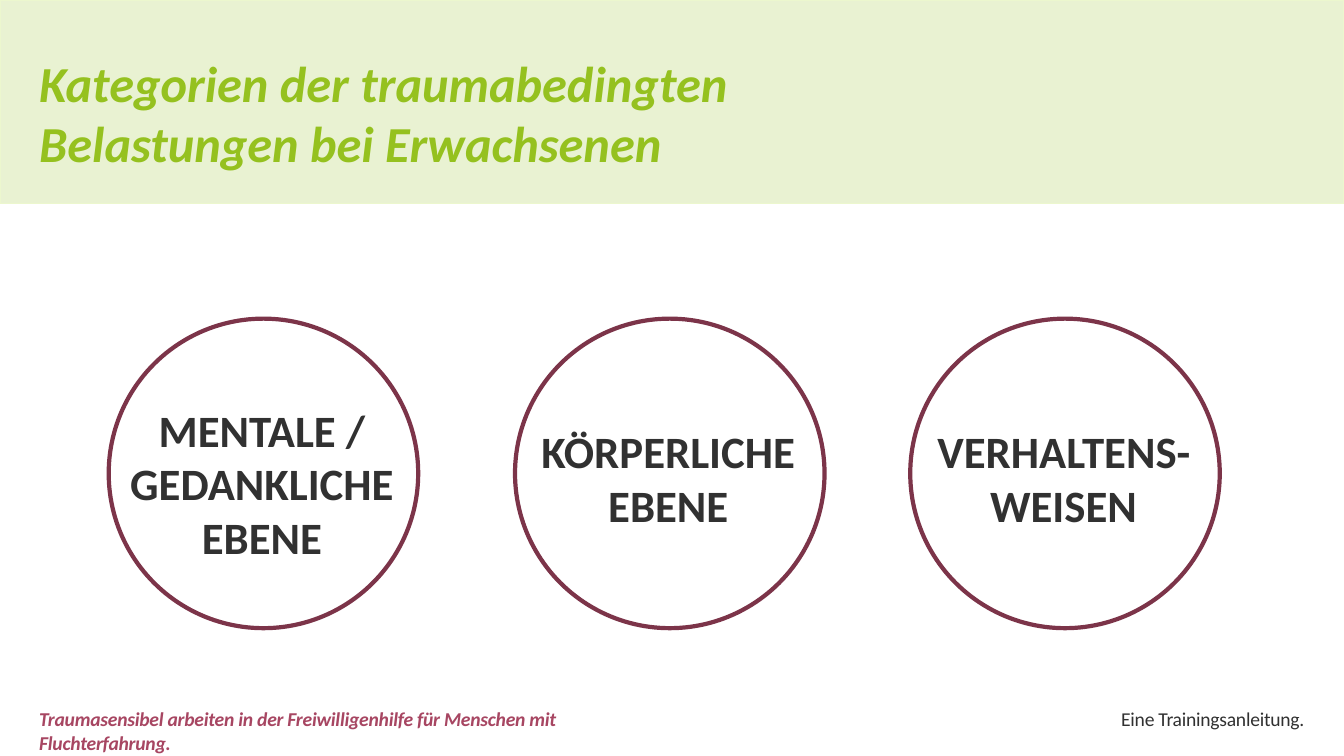
from lxml.etree import SubElement
from pptx import Presentation
from pptx.dml.color import RGBColor
from pptx.enum.shapes import MSO_SHAPE
from pptx.enum.text import MSO_ANCHOR, MSO_AUTO_SIZE, PP_ALIGN
from pptx.oxml.ns import qn
from pptx.util import Cm, Pt

GREEN = RGBColor(0x95, 0xC1, 0x1F)
PALE_GREEN = RGBColor(0xEC, 0xF7, 0xCE)
BERRY = RGBColor(0x7C, 0x34, 0x49)
ROSE = RGBColor(0xA7, 0x46, 0x62)
DARK = RGBColor(0x31, 0x31, 0x31)

WIDTH, HEIGHT = 33.87, 19.05
CIRCLE_TOP, CIRCLE_SIZE = 8.03, 7.8
FOOTER_TOP, FOOTER_HEIGHT = 17.7, 0.86


class SlideBuilder:
    font = "Calibri"

    def __init__(self, deck):
        self.page = deck.slides.add_slide(deck.slide_layouts[6])

    def shape(self, kind, left, top, width, height, line, weight, fill=None, opacity=100):
        shape = self.page.shapes.add_shape(kind, Cm(left), Cm(top), Cm(width), Cm(height))
        shape.shadow.inherit = False
        shape.line.color.rgb = line
        shape.line.width = Pt(weight)
        if fill is None:
            shape.fill.background()
        else:
            shape.fill.solid()
            shape.fill.fore_color.rgb = fill
            color = shape.fill._xPr.find(".//" + qn("a:srgbClr"))
            SubElement(color, qn("a:alpha"), val=str(opacity * 1000))

    def text(self, left, top, width, height, paragraphs, size, color, bold=False,
             italic=False, align=PP_ALIGN.LEFT, anchor=MSO_ANCHOR.TOP, wrap=True,
             grow=True, spacing=None):
        """Each paragraph is a list of lines."""
        box = self.page.shapes.add_textbox(Cm(left), Cm(top), Cm(width), Cm(height))
        frame = box.text_frame
        frame.word_wrap = wrap
        frame.auto_size = MSO_AUTO_SIZE.SHAPE_TO_FIT_TEXT if grow else MSO_AUTO_SIZE.NONE
        frame.vertical_anchor = anchor
        for index, lines in enumerate(paragraphs):
            para = frame.add_paragraph() if index else frame.paragraphs[0]
            para.alignment = align
            for number, line in enumerate(lines):
                if number:
                    para.add_line_break()
                span = para.add_run()
                span.text = line
                span.font.name = self.font
                span.font.size = Pt(size)
                span.font.bold = bold
                span.font.italic = italic
                span.font.color.rgb = color
                if spacing is not None:
                    span._r.get_or_add_rPr().set("spc", str(round(spacing * 100)))

    def footer(self, left, width, words, color, **style):
        self.text(left, FOOTER_TOP, width, FOOTER_HEIGHT, [[words]], 14, color,
                  wrap=False, spacing=-0.2, **style)

    def category(self, left, text_top, text_height, paragraphs):
        self.shape(MSO_SHAPE.OVAL, left, CIRCLE_TOP, CIRCLE_SIZE, CIRCLE_SIZE, BERRY, 3)
        self.text(left - 0.06, text_top, 7.85, text_height, paragraphs, 32, DARK,
                  bold=True, align=PP_ALIGN.CENTER, anchor=MSO_ANCHOR.BOTTOM)


def main():
    deck = Presentation()
    deck.slide_width, deck.slide_height = Cm(WIDTH), Cm(HEIGHT)
    slide = SlideBuilder(deck)

    # Footer
    slide.footer(0.74, 16.94, "Traumasensibel arbeiten in der Freiwilligenhilfe "
                 "für Menschen mit Fluchterfahrung.", ROSE, bold=True, italic=True)
    slide.footer(27.91, 5.21, "Eine Trainingsanleitung.", DARK, align=PP_ALIGN.RIGHT)

    # Title band
    slide.shape(MSO_SHAPE.RECTANGLE, 0, 0, WIDTH, 5.13, PALE_GREEN, 1, GREEN, 20)
    slide.text(0.74, 1.63, 32.28, 2.41,
               [["Kategorien der traumabedingten", "Belastungen bei Erwachsenen"]],
               36, GREEN, bold=True, italic=True, anchor=MSO_ANCHOR.MIDDLE, grow=False)

    # Category circles
    slide.category(2.74, 9.96, 4.37, [["MENTALE /", "GEDANKLICHE EBENE"]])
    slide.category(12.98, 10.52, 3, [["KÖRPERLICHE"], ["EBENE"]])
    slide.category(22.94, 10.52, 3, [["VERHALTENS-WEISEN"]])

    deck.save("out.pptx")


if __name__ == "__main__":
    main()
